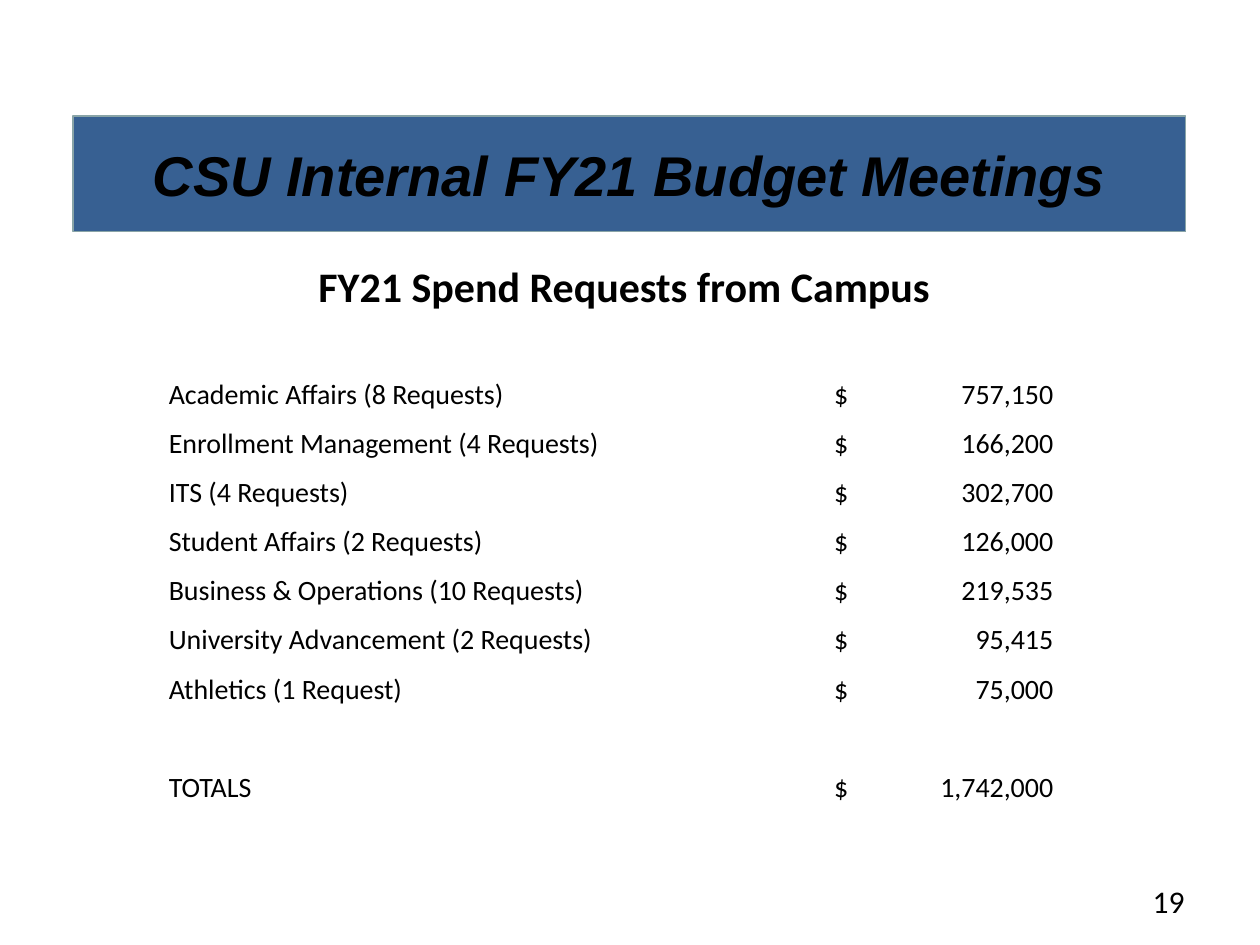
"""Build the slide of FY21 campus spend requests."""
from dataclasses import dataclass

from lxml import etree
from pptx import Presentation
from pptx.dml.color import RGBColor
from pptx.enum import shapes, text
from pptx.oxml import ns
from pptx.util import Inches, Pt

HEADLINE = "CSU Internal FY21 Budget Meetings"
SUBTITLE = "FY21 Spend Requests from Campus"
PAGE_NUMBER = "19"
REQUESTS = [
    ("Academic Affairs (8 Requests)", "757,150"),
    ("Enrollment Management (4 Requests)", "166,200"),
    ("ITS (4 Requests)", "302,700"),
    ("Student Affairs (2 Requests)", "126,000"),
    ("Business & Operations (10 Requests)", "219,535"),
    ("University Advancement (2 Requests)", "95,415"),
    ("Athletics (1 Request)", "75,000"),
]
TOTAL = ("TOTALS", "1,742,000")
COLUMN_WIDTHS = (5.23, 2.02)
HEADING_HEIGHT, ROW_HEIGHT = 0.57, 0.39
AMOUNT_INDENT, AMOUNT_TAB = 0.06, 1.74


@dataclass(frozen=True)
class Theme:
    """Colours, fonts and type sizes."""
    ink: RGBColor = RGBColor(0x00, 0x00, 0x00)
    banner: RGBColor = RGBColor(0x37, 0x60, 0x92)
    banner_edge: RGBColor = RGBColor(0x89, 0xA4, 0xA7)
    display: str = "Arial"
    body: str = "Calibri"
    headline: int = 32
    subtitle: int = 24
    page: int = 18
    entry: int = 16


THEME = Theme()


def write(frame, wording, size, align=text.PP_ALIGN.LEFT, face=THEME.body,
          bold=False, italic=False):
    """Add one styled run to the first paragraph."""
    paragraph = frame.paragraphs[0]
    paragraph.alignment = align
    run = paragraph.add_run()
    run.text = wording
    font = run.font
    font.name, font.size, font.bold, font.italic = face, Pt(size), bold, italic
    font.color.rgb = THEME.ink


def add_page_number(slide):
    """Place the page number at the lower right."""
    page = slide.shapes.add_textbox(Inches(7.17), Inches(6.95), Inches(2.33), Inches(0.4))
    page.text_frame.word_wrap = True
    write(page.text_frame, PAGE_NUMBER, THEME.page, text.PP_ALIGN.RIGHT)


def add_banner(slide):
    """Draw the headline banner."""
    banner = slide.shapes.add_shape(shapes.MSO_SHAPE.RECTANGLE, Inches(0.58),
                                    Inches(0.92), Inches(8.83), Inches(0.92))
    banner.shadow.inherit = False
    banner.fill.solid()
    banner.fill.fore_color.rgb = THEME.banner
    banner.line.color.rgb = THEME.banner_edge
    banner.line.width = Pt(0.75)
    banner.text_frame.word_wrap = True
    banner.text_frame.vertical_anchor = text.MSO_ANCHOR.MIDDLE
    write(banner.text_frame, HEADLINE, THEME.headline, text.PP_ALIGN.CENTER,
          THEME.display, bold=True, italic=True)


def write_amount(cell, amount):
    """Write a dollar sign and an amount aligned at a right tab."""
    cell.margin_left = Inches(AMOUNT_INDENT)
    properties = cell.text_frame.paragraphs[0]._p.get_or_add_pPr()
    tabs = etree.SubElement(properties, ns.qn("a:tabLst"))
    etree.SubElement(tabs, ns.qn("a:tab"), pos=str(Inches(AMOUNT_TAB)), algn="r")
    write(cell.text_frame, f"$\t{amount}", THEME.entry)


def add_requests(slide):
    """Build the table of requests and their total."""
    entries = [None, None, *REQUESTS, None, TOTAL]
    heights = [HEADING_HEIGHT] + [ROW_HEIGHT] * (len(entries) - 1)
    table = slide.shapes.add_table(
        len(entries), len(COLUMN_WIDTHS), Inches(1.33), Inches(1.92),
        Inches(sum(COLUMN_WIDTHS)), Inches(sum(heights))).table
    table.first_row = table.horz_banding = False
    for column, width in zip(table.columns, COLUMN_WIDTHS):
        column.width = Inches(width)
    for row, height in zip(table.rows, heights):
        row.height = Inches(height)
    for cell in table.iter_cells():
        cell.fill.background()
        cell.vertical_anchor = text.MSO_ANCHOR.BOTTOM
        cell.margin_left = cell.margin_right = cell.margin_top = Inches(0.01)
        cell.margin_bottom = 0
    heading = table.cell(0, 0)
    heading.merge(table.cell(0, 1))
    write(heading.text_frame, SUBTITLE, THEME.subtitle, text.PP_ALIGN.CENTER, bold=True)
    for index, entry in enumerate(entries):
        if entry:
            division, amount = entry
            write(table.cell(index, 0).text_frame, division, THEME.entry)
            write_amount(table.cell(index, 1), amount)


def main():
    """Assemble and save the slide."""
    deck = Presentation()
    deck.slide_width, deck.slide_height = Inches(10), Inches(7.5)
    slide = deck.slides.add_slide(deck.slide_layouts[6])
    add_page_number(slide)
    add_banner(slide)
    add_requests(slide)
    deck.save("out.pptx")


if __name__ == "__main__":
    main()
